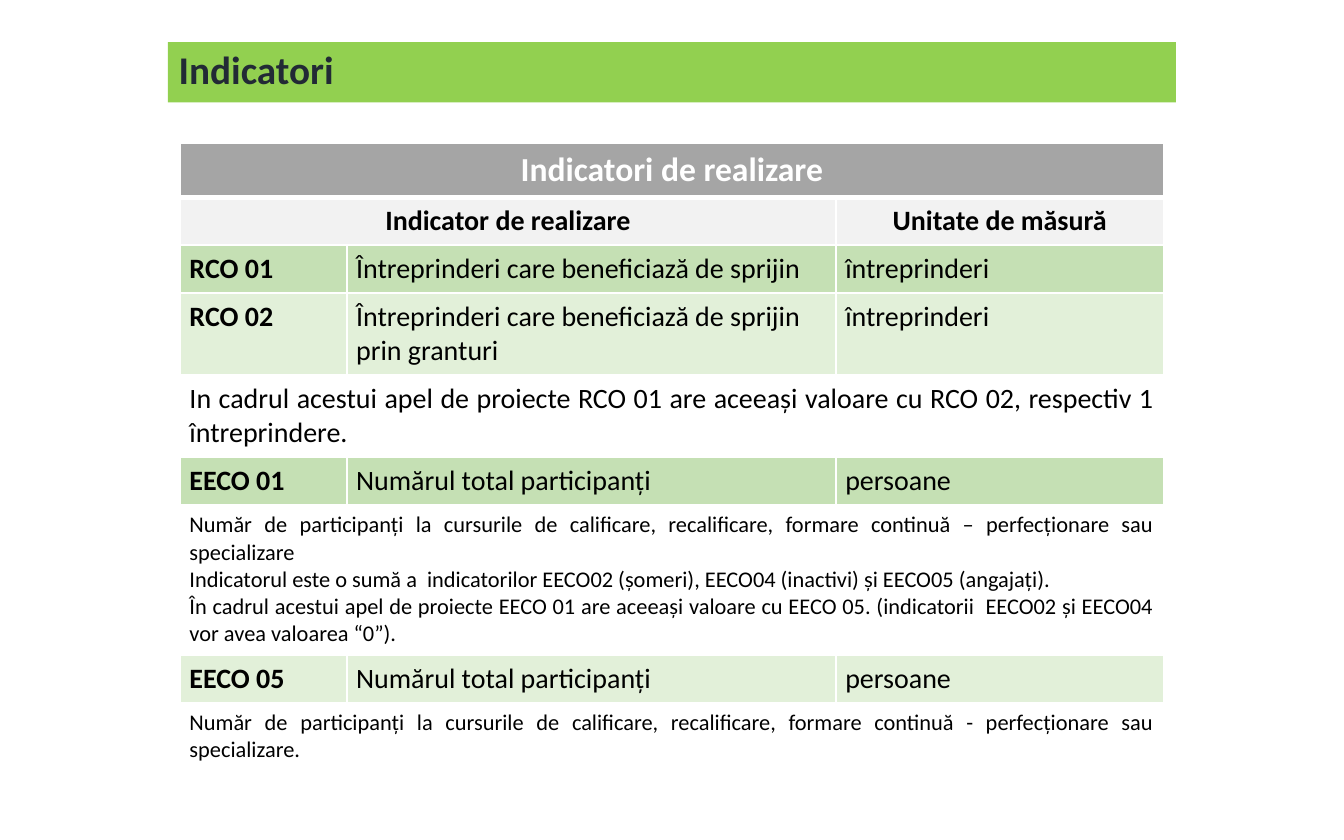
"""Build the slide with the table of output indicators."""
from lxml import etree
from pptx import Presentation
from pptx.dml.color import RGBColor
from pptx.enum.shapes import MSO_SHAPE
from pptx.enum.text import MSO_ANCHOR, PP_ALIGN
from pptx.oxml.ns import qn
from pptx.util import Inches, Pt

RECT = MSO_SHAPE.RECTANGLE
MIDDLE = MSO_ANCHOR.MIDDLE
LEFT, CENTER, JUSTIFY = PP_ALIGN.LEFT, PP_ALIGN.CENTER, PP_ALIGN.JUSTIFY

THEME = {
    "font": "Calibri",
    "bar": "92D050", "title": "222A35", "text": "000000", "white": "FFFFFF",
    "head": "A5A5A5", "subhead": "F2F2F2", "dark": "C5E0B4", "light": "E2F0D9",
    "title_size": 21, "head_size": 18, "body_size": 15, "note_size": 12,
    "rule": 0.96, "head_rule": 3,
}


def format_text(tf, size, color, bold, align):
    for p in tf.paragraphs:
        p.alignment = align
        for r in p.runs:
            r.font.name = THEME["font"]
            r.font.size = Pt(THEME[size])
            r.font.bold = bold
            r.font.color.rgb = RGBColor.from_string(THEME[color])


def add_border(cell, side, width):
    ln = etree.SubElement(cell._tc.get_or_add_tcPr(), qn(f"a:ln{side}"), w=str(Pt(width)))
    fill = etree.SubElement(ln, qn("a:solidFill"))
    etree.SubElement(fill, qn("a:srgbClr"), val=THEME["white"])


prs = Presentation()
prs.slide_width, prs.slide_height = Inches(10), Inches(6.25)
W, H = prs.slide_width, prs.slide_height
s = prs.slides.add_slide(prs.slide_layouts[6])

sp = s.shapes.add_shape(RECT, int(W * 0.125), int(H * 0.05), int(W * 0.75), int(H * 0.072))
sp.shadow.inherit = False
sp.fill.solid()
sp.fill.fore_color.rgb = RGBColor.from_string(THEME["bar"])
sp.line.fill.background()
tf = sp.text_frame
tf.word_wrap = True
tf.vertical_anchor = MIDDLE
tf.margin_left = tf.margin_right = Inches(0.08)
tf.margin_top = tf.margin_bottom = Inches(0.04)
tf.text = "Indicatori"
tf.paragraphs[0].line_spacing = 0.9
format_text(tf, "title_size", "title", True, LEFT)

# Each row: share of slide height, fill, type size, {first column: text}
ROWS = [
    (0.06, "head", "head_size", {0: "Indicatori de realizare"}),
    (0.05, "subhead", "body_size", {0: "Indicator de realizare", 2: "Unitate de măsură"}),
    (0.05, "dark", "body_size",
     {0: "RCO 01", 1: "Întreprinderi care beneficiază de sprijin", 2: "întreprinderi"}),
    (0.09, "light", "body_size",
     {0: "RCO 02", 1: "Întreprinderi care beneficiază de sprijin prin granturi",
      2: "întreprinderi"}),
    (0.09, None, "body_size",
     {0: "In cadrul acestui apel de proiecte RCO 01 are aceeași valoare cu RCO 02, "
         "respectiv 1 întreprindere."}),
    (0.05, "dark", "body_size",
     {0: "EECO 01", 1: "Numărul total participanți", 2: "persoane"}),
    (0.17, None, "note_size",
     {0: "Număr de participanți la cursurile de calificare, recalificare, formare continuă "
         "– perfecționare sau specializare\n"
         "Indicatorul este o sumă a  indicatorilor EECO02 (șomeri), EECO04 (inactivi) "
         "și EECO05 (angajați).\n"
         "În cadrul acestui apel de proiecte EECO 01 are aceeași valoare cu EECO 05. "
         "(indicatorii  EECO02 și EECO04 vor avea valoarea “0”)."}),
    (0.05, "light", "body_size",
     {0: "EECO 05", 1: "Numărul total participanți", 2: "persoane"}),
    (0.07, None, "note_size",
     {0: "Număr de participanți la cursurile de calificare, recalificare, formare continuă "
         "- perfecționare sau specializare."}),
]
COLS = [0.124, 0.364, 0.244]

table = s.shapes.add_table(len(ROWS), len(COLS), int(W * 0.134), int(H * 0.17),
                           int(W * sum(COLS)), int(H * sum(row[0] for row in ROWS))).table
table.first_row = table.horz_banding = False
for column, share in zip(table.columns, COLS):
    column.width = int(W * share)

for i, (share, fill, size, texts) in enumerate(ROWS):
    table.rows[i].height = int(H * share)
    heading = fill in ("head", "subhead")
    align = CENTER if heading else LEFT if fill else JUSTIFY
    color = "white" if fill == "head" else "text"
    widths = {"L": THEME["rule"], "R": THEME["rule"],
              "T": THEME["head_rule" if i == 1 else "rule"],
              "B": THEME["head_rule" if i == 0 else "rule"]}
    for j in range(len(COLS)):
        cell = table.cell(i, j)
        for side, width in widths.items():
            add_border(cell, side, width)
        if fill:
            cell.fill.solid()
            cell.fill.fore_color.rgb = RGBColor.from_string(THEME[fill])
        else:
            cell.fill.background()
        cell.margin_left = cell.margin_right = Inches(0.07)
        cell.margin_top = cell.margin_bottom = Inches(0.05)
    starts = list(texts)
    for start, stop in zip(starts, starts[1:] + [len(COLS)]):
        cell = table.cell(i, start)
        if stop - start > 1:
            cell.merge(table.cell(i, stop - 1))
        cell.text_frame.text = texts[start]
        bold = heading or (fill is not None and start == 0)
        format_text(cell.text_frame, size, color, bold, align)

prs.save("out.pptx")
